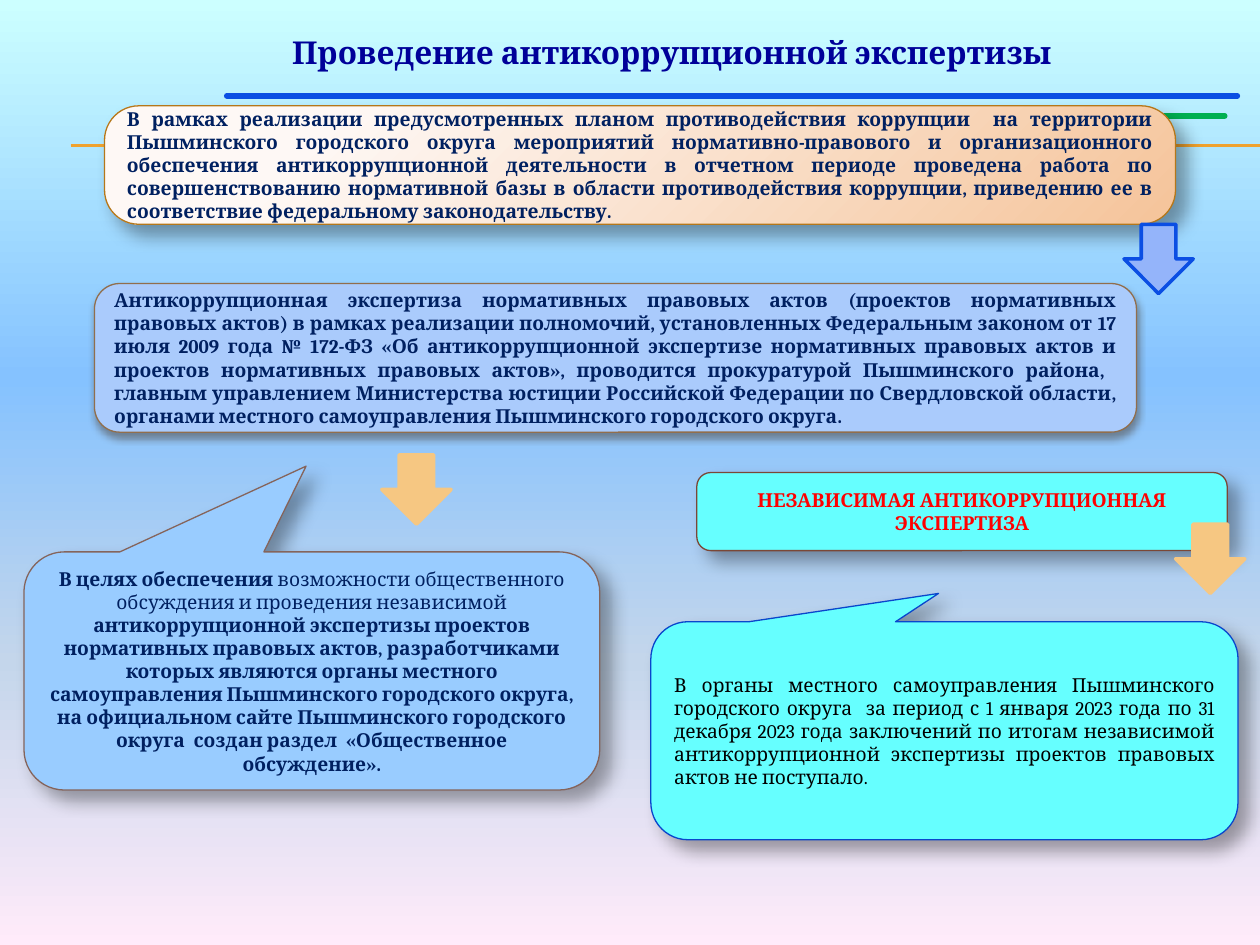
from dataclasses import dataclass
from typing import Optional

from lxml import etree
from pptx import Presentation
from pptx.dml.color import RGBColor
from pptx.enum import shapes, text
from pptx.oxml import ns
from pptx.util import Inches, Pt


@dataclass(frozen=True)
class Theme:
    font: str = "Cambria"
    title_size: float = 18
    body_size: float = 11
    title: str = "000099"
    navy: str = "002060"
    black: str = "000000"
    red: str = "FF0000"
    blue: str = "0B4EE3"
    green: str = "00B050"
    gold: str = "F0A22E"
    cyan: str = "66FFFF"
    sky: str = "99CCFF"
    lilac: str = "AACBFC"
    arrow_blue: str = "94B4FA"
    arrow_sand: str = "F6C782"
    backdrop: tuple = ((0, "CCFFFF"), (40, "85C2FF"), (70, "C4D6EB"), (100, "FFEBFA"))
    peach: tuple = ((20, "FEF8F5"), (100, "F5C49A"))


@dataclass(frozen=True)
class Shadow:
    color: str
    alpha: int
    blur: float
    distance: float
    angle: int


@dataclass(frozen=True)
class Rule:
    left: float
    right: float
    top: float
    color: str
    width: float
    cap: str = "flat"


@dataclass(frozen=True)
class Panel:
    kind: shapes.MSO_SHAPE
    frame: tuple
    adjustments: tuple
    fill: Optional[str]  # None stands for the peach gradient
    outline: str
    spans: tuple  # (wording, bold) pairs
    color: str
    align: text.PP_ALIGN
    shadow: Shadow
    turned: bool = False


@dataclass(frozen=True)
class Arrow:
    left: float
    top: float
    fill: str
    outline: str


THEME = Theme()
SOFT = Shadow("000000", 35, 10.2, 8, 45)
GLOW = Shadow("453526", 48, 4.5, 3, 90)
ARROW_SIDE = 0.55
ROUND = shapes.MSO_SHAPE.ROUNDED_RECTANGLE
CALLOUT = shapes.MSO_SHAPE.ROUNDED_RECTANGULAR_CALLOUT
CENTER, JUSTIFY = text.PP_ALIGN.CENTER, text.PP_ALIGN.JUSTIFY

RULES = (
    Rule(0.56, 10, 1.15, THEME.gold, 0.75),
    Rule(0.56, 10, 1.16, THEME.gold, 0.75),
    Rule(1.8, 9.82, 0.76, THEME.blue, 3.25, "rnd"),
    Rule(1.7, 9.72, 0.92, THEME.green, 3.25, "rnd"),
)

PANELS = (
    Panel(ROUND, (5.53, 3.75, 4.21, 0.62), (0.18,), THEME.cyan, "7B4736",
          (("НЕЗАВИСИМАЯ АНТИКОРРУПЦИОННАЯ ЭКСПЕРТИЗА", True),), THEME.red, CENTER, SOFT),
    Panel(CALLOUT, (6.63, 3.47, 1.73, 4.66), (-0.63, 0.01, 0.17), THEME.cyan, "0A46CC",
          (("В органы местного самоуправления Пышминского городского округа  за период "
            "с 1 января 2023 года по 31 декабря 2023 года заключений по итогам независимой "
            "антикоррупционной экспертизы проектов правовых актов не поступало.", False),),
          THEME.black, JUSTIFY, SOFT, turned=True),
    Panel(ROUND, (0.83, 0.84, 8.5, 0.94), (0.29,), None, "B5771A",
          (("В рамках реализации предусмотренных планом противодействия коррупции  на "
            "территории Пышминского городского округа мероприятий нормативно-правового и "
            "организационного обеспечения антикоррупционной деятельности в отчетном периоде "
            "проведена работа по совершенствованию нормативной базы в области противодействия "
            "коррупции, приведению ее в соответствие федеральному законодательству.", True),),
          THEME.navy, JUSTIFY, SOFT),
    Panel(ROUND, (0.75, 2.25, 8.27, 1.18), (0.17,), THEME.lilac, "916E4C",
          (("Антикоррупционная экспертиза нормативных правовых актов (проектов нормативных "
            "правовых актов) в рамках реализации полномочий, установленных Федеральным законом "
            "от 17 июля 2009 года № 172-ФЗ «Об антикоррупционной экспертизе нормативных "
            "правовых актов и проектов нормативных правовых актов», проводится прокуратурой "
            "Пышминского района,  главным управлением Министерства юстиции Российской Федерации "
            "по Свердловской области, органами местного самоуправления Пышминского городского "
            "округа.", True),), THEME.navy, JUSTIFY, GLOW),
    Panel(CALLOUT, (1.53, 3.04, 1.89, 4.57), (-0.86, 0.01, 0.17), THEME.sky, "85645B",
          (("В целях обеспечения ", True),
           ("возможности общественного обсуждения и проведения независимой ", False),
           ("антикоррупционной экспертизы проектов нормативных правовых актов, разработчиками "
            "которых являются органы местного самоуправления Пышминского городского округа, на "
            "официальном сайте Пышминского городского округа  создан раздел  «Общественное "
            "обсуждение».", True)), THEME.navy, CENTER, SOFT, turned=True),
)

ARROWS = (
    Arrow(8.92, 1.78, THEME.arrow_blue, THEME.blue),
    Arrow(9.33, 4.16, THEME.arrow_sand, THEME.arrow_sand),
    Arrow(3.03, 3.61, THEME.arrow_sand, THEME.arrow_sand),
)


def child(parent, tag: str, **attributes):
    names = {key: str(value) for key, value in attributes.items()}
    return etree.SubElement(parent, ns.qn(tag), names)


def set_gradient(fill, stops: tuple):
    """Turn a fill into a gradient with the given stops and return its element."""
    fill.gradient()
    stop_list = fill.gradient_stops[0]._gs.getparent()
    for old in list(stop_list):
        stop_list.remove(old)
    for percent, color in stops:
        child(child(stop_list, "a:gs", pos=percent * 1000), "a:srgbClr", val=color)
    return stop_list.getparent()


def write(para, wording: str, *, size: float, color: str, bold: bool, align) -> None:
    para.alignment = align
    span = para.add_run()
    span.text = wording
    span.font.name = THEME.font
    span.font.size = Pt(size)
    span.font.bold = bold
    span.font.color.rgb = RGBColor.from_string(color)


def set_line(line, color: str, width: float) -> None:
    line.color.rgb = RGBColor.from_string(color)
    line.width = Pt(width)


def add_shadow(shape, shadow: Shadow) -> None:
    effects = shape._element.spPr.find(ns.qn("a:effectLst"))
    outer = child(effects, "a:outerShdw", blurRad=Pt(shadow.blur), dist=Pt(shadow.distance),
                  dir=shadow.angle * 60000, algn="tl", rotWithShape=0)
    tint = child(outer, "a:srgbClr", val=shadow.color)
    child(tint, "a:alpha", val=shadow.alpha * 1000)


def draw_rule(slide, rule: Rule) -> None:
    line = slide.shapes.add_connector(
        shapes.MSO_CONNECTOR.STRAIGHT, Inches(rule.left), Inches(rule.top),
        Inches(rule.right), Inches(rule.top))
    set_line(line.line, rule.color, rule.width)
    line.line._get_or_add_ln().set("cap", rule.cap)
    child(line._element.spPr, "a:effectLst")


def add_block(slide, kind, frame: tuple, fill: Optional[str], outline: str, width: float):
    box = slide.shapes.add_shape(kind, *map(Inches, frame))
    box.shadow.inherit = False
    if fill:
        box.fill.solid()
        box.fill.fore_color.rgb = RGBColor.from_string(fill)
    set_line(box.line, outline, width)
    return box


def draw_panel(slide, panel: Panel) -> None:
    box = add_block(slide, panel.kind, panel.frame, panel.fill, panel.outline, 0.75)
    for index, value in enumerate(panel.adjustments):
        box.adjustments[index] = value
    if panel.fill is None:
        gradient = set_gradient(box.fill, THEME.peach)
        gradient.remove(gradient.find(ns.qn("a:lin")))
        center = child(gradient, "a:path", path="circle")
        child(center, "a:fillToRect", l=-15000, t=-15000, r=115000, b=115000)
    add_shadow(box, panel.shadow)
    frame = box.text_frame
    frame.word_wrap = True
    frame.vertical_anchor = text.MSO_ANCHOR.MIDDLE
    if panel.turned:
        box.rotation = 90
        frame._txBody.bodyPr.set("vert", "vert270")
    for wording, bold in panel.spans:
        write(frame.paragraphs[0], wording, size=THEME.body_size, color=panel.color,
              bold=bold, align=panel.align)


def main() -> None:
    deck = Presentation()
    deck.slide_width, deck.slide_height = Inches(10), Inches(7.5)
    slide = deck.slides.add_slide(deck.slide_layouts[5])

    # Background, top to bottom
    set_gradient(slide.background.fill, THEME.backdrop).find(ns.qn("a:lin")).set("ang", "5400000")

    # Title
    title = slide.shapes.title
    title.left, title.top, title.width, title.height = map(Inches, (0.67, 0.21, 9.33, 0.47))
    title.text_frame.vertical_anchor = text.MSO_ANCHOR.TOP
    write(title.text_frame.paragraphs[0], "Проведение антикоррупционной экспертизы",
          size=THEME.title_size, color=THEME.title, bold=True, align=CENTER)

    # Rules, text panels, then arrows on top
    for rule in RULES:
        draw_rule(slide, rule)
    for panel in PANELS:
        draw_panel(slide, panel)
    for arrow in ARROWS:
        add_block(slide, shapes.MSO_SHAPE.DOWN_ARROW,
                  (arrow.left, arrow.top, ARROW_SIDE, ARROW_SIDE), arrow.fill, arrow.outline, 2)

    deck.save("out.pptx")


if __name__ == "__main__":
    main()
